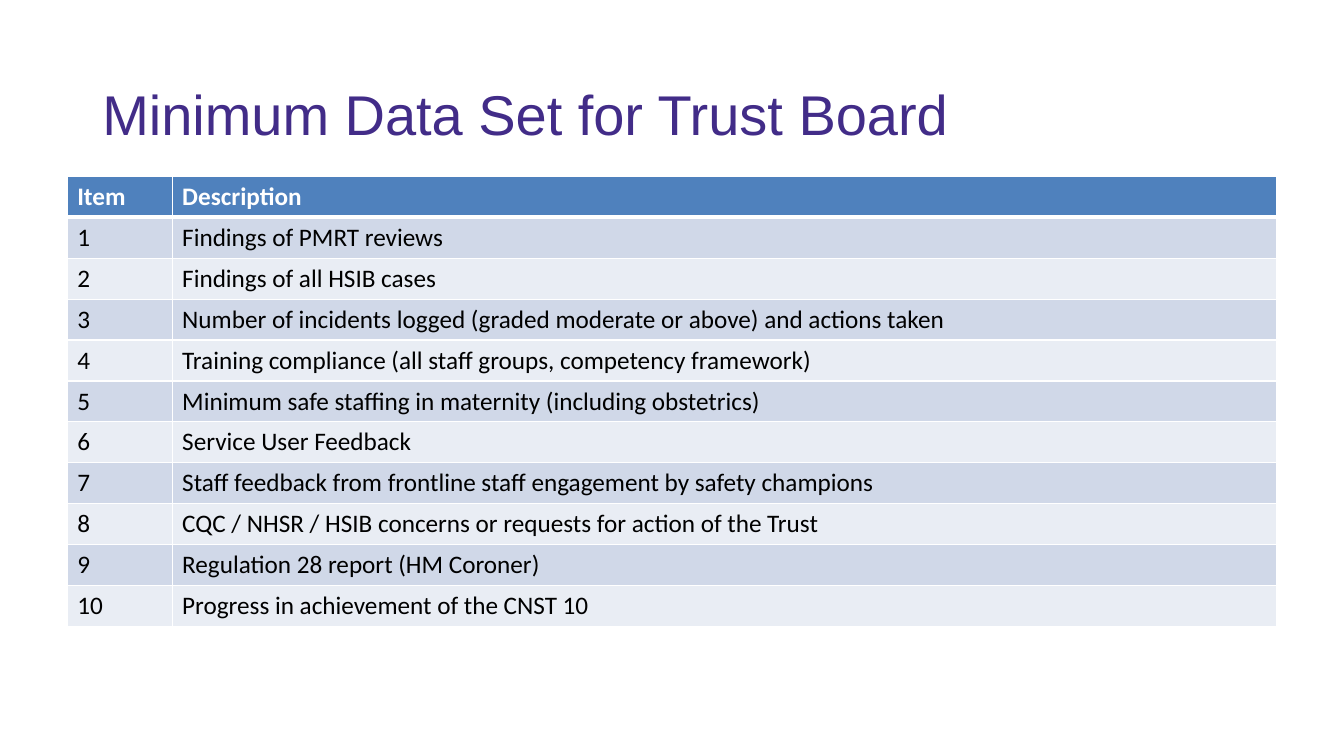
from lxml import etree
from pptx import Presentation
from pptx.dml.color import RGBColor
from pptx.enum.text import MSO_ANCHOR
from pptx.oxml.ns import qn
from pptx.util import Pt

EMU_PER_PX = 9525
SLIDE_WIDTH, SLIDE_HEIGHT = 1280, 720
MIDDLE = MSO_ANCHOR.MIDDLE

PURPLE = RGBColor(0x42, 0x2C, 0x88)
HEADER_BLUE = RGBColor(0x4F, 0x81, 0xBD)
BAND_DARK = RGBColor(0xD0, 0xD8, 0xE8)
BAND_LIGHT = RGBColor(0xE9, 0xED, 0xF4)
WHITE = RGBColor(0xFF, 0xFF, 0xFF)
BLACK = RGBColor(0x00, 0x00, 0x00)

DESCRIPTIONS = [
    "Findings of PMRT reviews",
    "Findings of all HSIB cases",
    "Number of incidents logged (graded moderate or above) and actions taken",
    "Training compliance (all staff groups, competency framework)",
    "Minimum safe staffing in maternity (including obstetrics)",
    "Service User Feedback",
    "Staff feedback from frontline staff engagement by safety champions",
    "CQC / NHSR / HSIB concerns or requests for action of the Trust",
    "Regulation 28 report (HM Coroner)",
    "Progress in achievement of the CNST 10",
]


def px(length):
    return length * EMU_PER_PX


class SlideBuilder:
    title_font, table_font = "Arial", "Calibri"
    title_size, table_size = 40, 18
    thin_border, header_border = 1, 3

    def __init__(self, slide):
        self.slide = slide

    def format_text(self, text_frame, font_name, size, color, bold=False):
        font = text_frame.paragraphs[0].runs[0].font
        font.name, font.size, font.bold = font_name, Pt(size), bold
        font.color.rgb = color

    def add_title(self, text, left, top, width, height):
        frame = self.slide.shapes.add_textbox(
            px(left), px(top), px(width), px(height)).text_frame
        frame.word_wrap = True
        frame.vertical_anchor = MIDDLE
        frame.text = text
        self.format_text(frame, self.title_font, self.title_size, PURPLE)

    def add_borders(self, cell, top_width, bottom_width):
        """Draw white cell borders; the schema wants them ahead of the fill."""
        properties = cell._tc.get_or_add_tcPr()
        widths = {"a:lnL": self.thin_border, "a:lnR": self.thin_border,
                  "a:lnT": top_width, "a:lnB": bottom_width}
        for position, (tag, width) in enumerate(widths.items()):
            line = etree.Element(qn(tag), w=str(Pt(width)))
            solid = etree.SubElement(line, qn("a:solidFill"))
            etree.SubElement(solid, qn("a:srgbClr"), val=str(WHITE))
            properties.insert(position, line)

    def add_table(self, rows, left, top, column_widths, row_height):
        table = self.slide.shapes.add_table(
            len(rows), len(column_widths), px(left), px(top),
            px(sum(column_widths)), px(row_height * len(rows))).table
        for column, width in zip(table.columns, column_widths):
            column.width = px(width)
        for index, values in enumerate(rows):
            table.rows[index].height = px(row_height)
            is_header = index == 0
            band = BAND_DARK if index % 2 else BAND_LIGHT
            for column_index, value in enumerate(values):
                cell = table.cell(index, column_index)
                cell.text_frame.text = value
                self.format_text(cell.text_frame, self.table_font, self.table_size,
                                 WHITE if is_header else BLACK, is_header)
                cell.fill.solid()
                cell.fill.fore_color.rgb = HEADER_BLUE if is_header else band
                self.add_borders(
                    cell,
                    self.header_border if index == 1 else self.thin_border,
                    self.header_border if is_header else self.thin_border)


def main():
    presentation = Presentation()
    presentation.slide_width = px(SLIDE_WIDTH)
    presentation.slide_height = px(SLIDE_HEIGHT)
    builder = SlideBuilder(presentation.slides.add_slide(presentation.slide_layouts[6]))

    builder.add_title("Minimum Data Set for Trust Board", 88, 38, 1104, 139)
    items = [(str(number), text) for number, text in enumerate(DESCRIPTIONS, 1)]
    builder.add_table([("Item", "Description"), *items], 64, 168, (100, 1052), 39)

    presentation.save("out.pptx")


if __name__ == "__main__":
    main()
